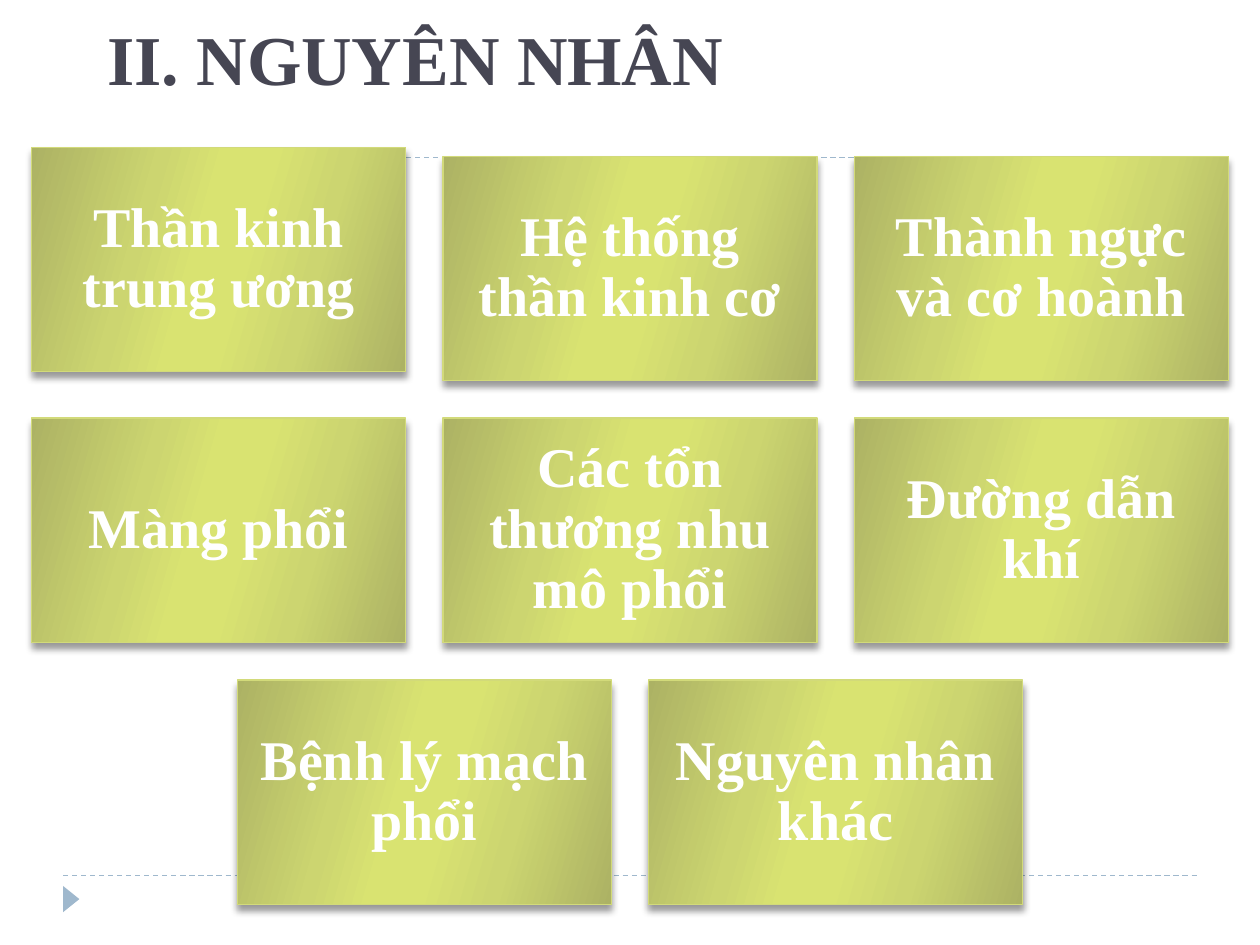
from lxml import etree
from pptx import Presentation
from pptx.dml.color import RGBColor
from pptx.enum.dml import MSO_LINE
from pptx.enum.shapes import MSO_CONNECTOR, MSO_SHAPE
from pptx.enum.text import MSO_ANCHOR, MSO_AUTO_SIZE, PP_ALIGN
from pptx.oxml.ns import qn
from pptx.util import Cm, Pt

FONT = "Times New Roman"
TITLE_COLOR = RGBColor(0x46, 0x46, 0x53)
ACCENT = RGBColor(0x9F, 0xB8, 0xCD)
WHITE = RGBColor(0xFF, 0xFF, 0xFF)
BLACK = RGBColor(0x00, 0x00, 0x00)
TILE_BORDER = RGBColor(0xD2, 0xDA, 0x7A)
TILE_DARK = RGBColor(0xAC, 0xB2, 0x64)
TILE_MID = RGBColor(0xCC, 0xD5, 0x70)
TILE_LIGHT = RGBColor(0xD9, 0xE3, 0x71)
TILE_STOPS = [(0, TILE_DARK), (30, TILE_MID), (45, TILE_LIGHT),
              (55, TILE_LIGHT), (73, TILE_MID), (100, TILE_DARK)]

SLIDE_WIDTH, SLIDE_HEIGHT = 25.4, 19.05
TILE_WIDTH, TILE_HEIGHT, TILE_GAP = 7.54, 4.52, 0.75
FIRST_ROW_TOP, ROW_PITCH = 3.15, 5.28
FIRST_TILE_LIFT = 0.18

CAUSES = [
    ["Thần kinh trung ương", "Hệ thống thần kinh cơ", "Thành ngực và cơ hoành"],
    ["Màng phổi", "Các tổn thương nhu mô phổi", "Đường dẫn khí"],
    ["Bệnh lý mạch phổi", "Nguyên nhân khác"],
]


def style_font(font, size, color):
    font.name = FONT
    font.size = Pt(size)
    font.bold = True
    font.color.rgb = color


def add_color(parent, color):
    return etree.SubElement(parent, qn("a:srgbClr"), val=str(color))


def add_divider(slide, top):
    divider = slide.shapes.add_connector(
        MSO_CONNECTOR.STRAIGHT, Cm(1.27), Cm(top), Cm(24.13), Cm(top))
    divider.line.color.rgb = ACCENT
    divider.line.width = Pt(0.75)
    divider.line.dash_style = MSO_LINE.DASH
    etree.SubElement(divider._element.spPr, qn("a:effectLst"))


def add_corner_marker(slide):
    marker = slide.shapes.add_shape(
        MSO_SHAPE.ISOSCELES_TRIANGLE, Cm(1.17), Cm(17.96), Cm(0.53), Cm(0.33))
    marker.rotation = 90
    marker.shadow.inherit = False
    marker.fill.solid()
    marker.fill.fore_color.rgb = ACCENT
    marker.line.fill.background()


def set_title(slide, text):
    title = slide.shapes.title
    title.left, title.top = Cm(1.91), Cm(0.43)
    title.width, title.height = Cm(19.35), Cm(1.7)
    frame = title.text_frame
    frame.text = text
    frame.auto_size = MSO_AUTO_SIZE.NONE
    frame.vertical_anchor = MSO_ANCHOR.BOTTOM
    heading = frame.paragraphs[0]
    heading.alignment = PP_ALIGN.LEFT
    style_font(heading.font, 40, TITLE_COLOR)


def fill_gradient(tile):
    tile.fill.gradient()
    tile.fill.gradient_angle = 344
    stops = tile._element.spPr.find(".//" + qn("a:gsLst"))
    for stop in list(stops):
        stops.remove(stop)
    for percent, color in TILE_STOPS:
        add_color(etree.SubElement(stops, qn("a:gs"), pos=str(percent * 1000)), color)


def add_shadow(tile):
    tile.shadow.inherit = False
    effects = tile._element.spPr.find(qn("a:effectLst"))
    shadow = etree.SubElement(
        effects, qn("a:outerShdw"), blurRad=str(Pt(4)), dist=str(Pt(3.4)),
        dir="5400000", rotWithShape="0")
    etree.SubElement(add_color(shadow, BLACK), qn("a:alpha"), val="40000")


def add_tile(slide, left, top, cause):
    tile = slide.shapes.add_shape(
        MSO_SHAPE.RECTANGLE, Cm(left), Cm(top), Cm(TILE_WIDTH), Cm(TILE_HEIGHT))
    fill_gradient(tile)
    tile.line.color.rgb = TILE_BORDER
    tile.line.width = Pt(0.75)
    add_shadow(tile)
    frame = tile.text_frame
    frame.word_wrap = True
    frame.vertical_anchor = MSO_ANCHOR.MIDDLE
    frame.margin_left = frame.margin_right = Cm(0.34)
    frame.margin_top = frame.margin_bottom = Cm(0.34)
    frame.text = cause
    label = frame.paragraphs[0]
    label.alignment = PP_ALIGN.CENTER
    label.line_spacing = 0.9
    label.space_after = Pt(11.2)
    style_font(label.font, 32, WHITE)


def add_cause_grid(slide):
    pitch = TILE_WIDTH + TILE_GAP
    for row, causes in enumerate(CAUSES):
        row_left = (SLIDE_WIDTH - len(causes) * pitch + TILE_GAP) / 2
        for column, cause in enumerate(causes):
            lift = FIRST_TILE_LIFT if row == column == 0 else 0
            add_tile(slide, row_left + column * pitch,
                     FIRST_ROW_TOP + row * ROW_PITCH - lift, cause)


def main():
    deck = Presentation()
    deck.slide_width, deck.slide_height = Cm(SLIDE_WIDTH), Cm(SLIDE_HEIGHT)
    slide = deck.slides.add_slide(deck.slide_layouts[5])
    for top in (17.65, 3.18):
        add_divider(slide, top)
    add_corner_marker(slide)
    set_title(slide, "II. NGUYÊN NHÂN")
    add_cause_grid(slide)
    deck.save("out.pptx")


if __name__ == "__main__":
    main()
